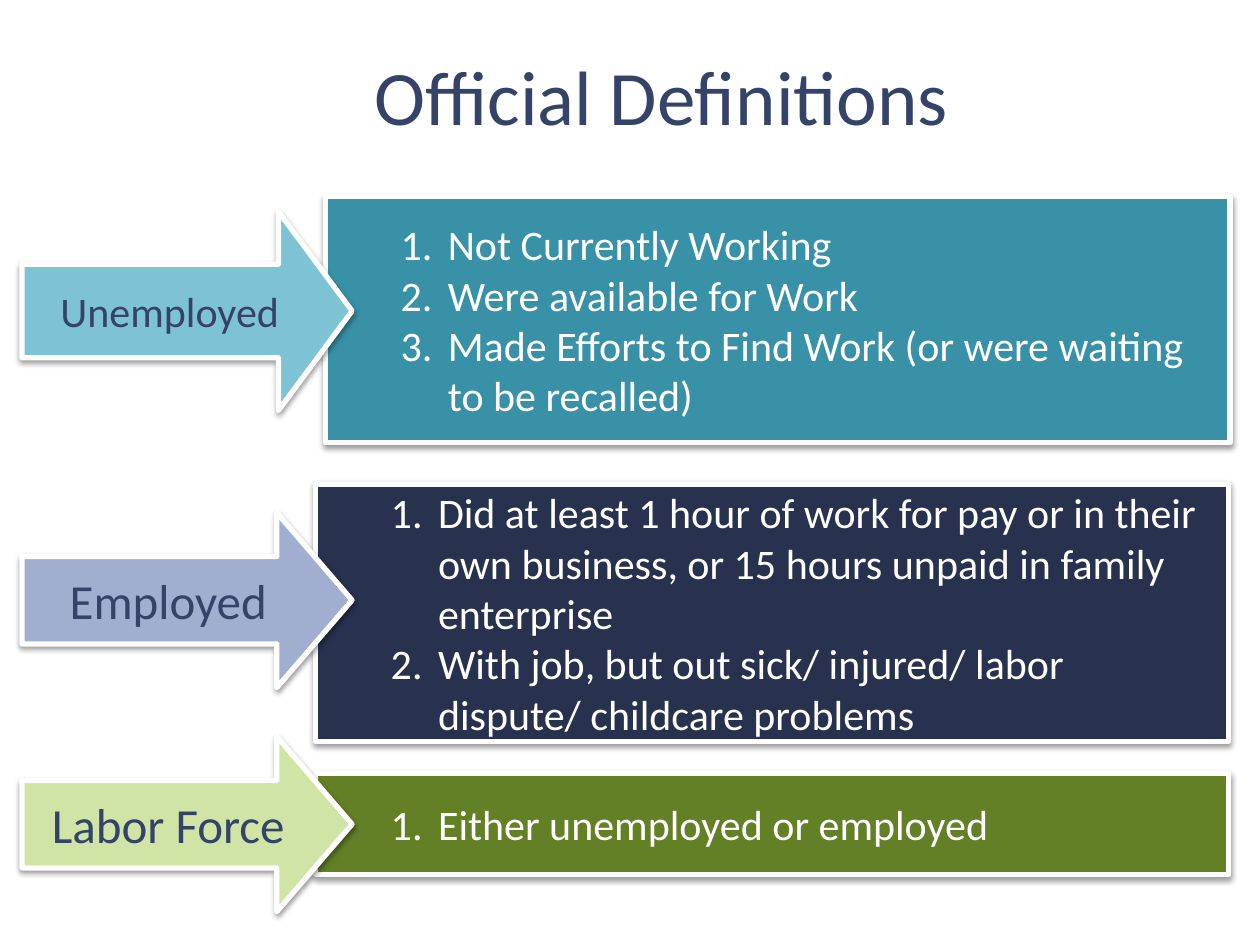
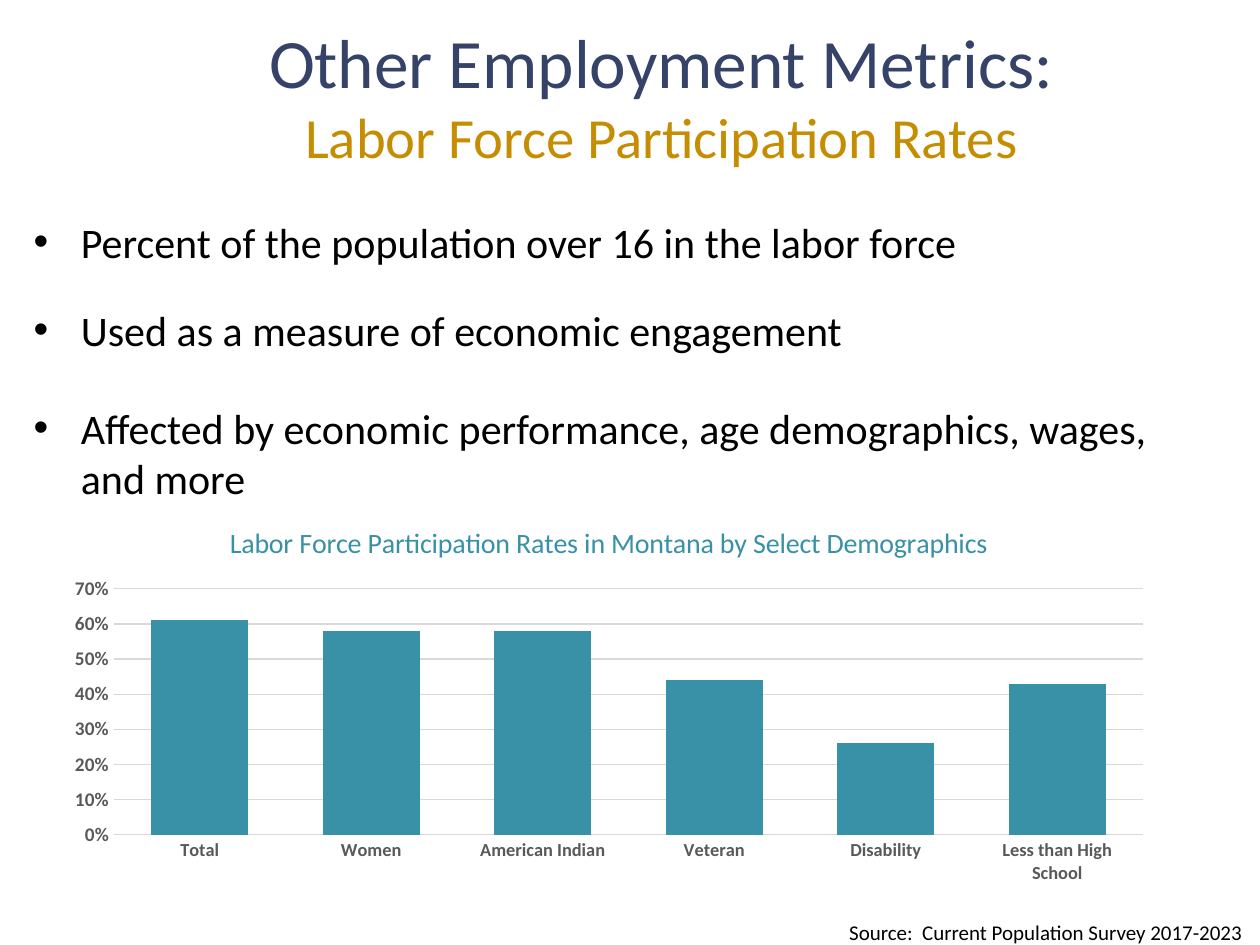
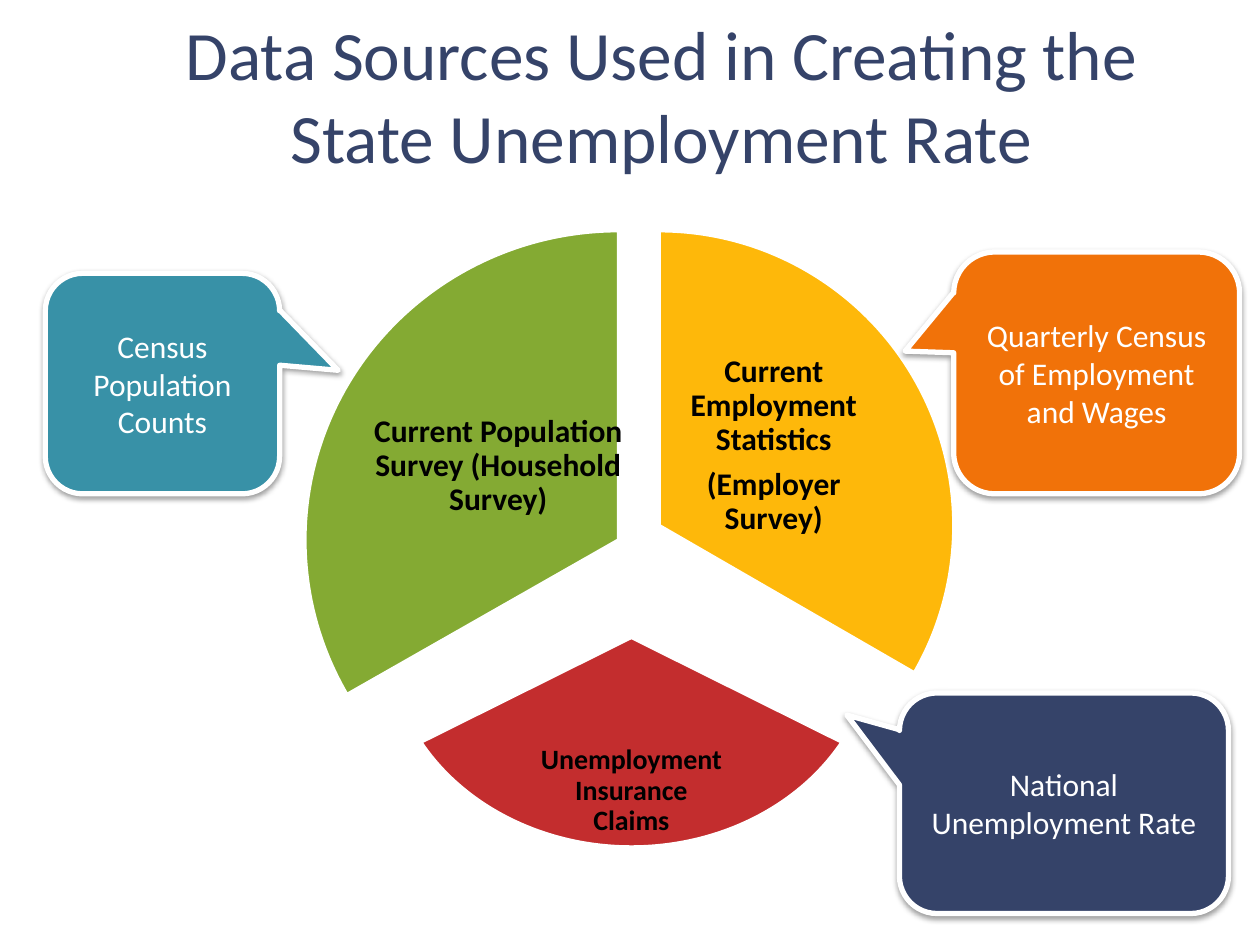
from math import cos, radians, sin, tan

from lxml import etree
from pptx import Presentation
from pptx.chart.data import CategoryChartData
from pptx.dml.color import RGBColor
from pptx.enum.chart import XL_CHART_TYPE, XL_TICK_MARK
from pptx.enum.shapes import MSO_SHAPE as SHAPE
from pptx.enum.text import MSO_ANCHOR as ANCHOR, MSO_AUTO_SIZE as AUTO, PP_ALIGN as ALIGN
from pptx.oxml.ns import qn
from pptx.util import Pt

# Shared look
FONT = "Calibri"
NAVY = RGBColor(0x35, 0x43, 0x69)
DARK_NAVY = RGBColor(0x28, 0x32, 0x4F)
TEAL = RGBColor(0x38, 0x91, 0xA7)
PALE_TEAL = RGBColor(0x7E, 0xC3, 0xD4)
PALE_BLUE = RGBColor(0xA1, 0xAE, 0xD0)
OLIVE = RGBColor(0x63, 0x80, 0x26)
PALE_GREEN = RGBColor(0xD0, 0xE4, 0xA6)
GREEN = RGBColor(0x84, 0xAA, 0x33)
GOLD = RGBColor(0xC5, 0x8D, 0x01)
YELLOW = RGBColor(0xFE, 0xB8, 0x0A)
ORANGE = RGBColor(0xF1, 0x72, 0x09)
RED = RGBColor(0xC3, 0x2D, 0x2E)
WHITE = RGBColor(0xFF, 0xFF, 0xFF)
BLACK = RGBColor(0x00, 0x00, 0x00)
GREY = RGBColor(0x59, 0x59, 0x59)
LIGHT_GREY = RGBColor(0xD9, 0xD9, 0xD9)

TITLE_AREA = (54, 12, 648, 84)
CONTENT_LAYOUT, TITLE_LAYOUT = 1, 5

# Slide 1: arrow area, head adjustments, label, size, fill; panel area, fill; numbered lines
DEFINITIONS = [
    ((12.6, 120.8, 188.6, 113.8), (0.47, 0.37), "Unemployed", 24, PALE_TEAL,
     (185.8, 112.4, 517, 140.4), TEAL,
     ["Not Currently Working", "Were available for Work",
      "Made Efforts to Find Work (or were waiting to be recalled)"]),
    ((12.6, 293, 188.6, 100), (0.5, 0.43), "Employed", 28, PALE_BLUE,
     (180.2, 276.7, 522, 146.9), DARK_NAVY,
     ["Did at least 1 hour of work for pay or in their own business, "
      "or 15 hours unpaid in family enterprise",
      "With job, but out sick/ injured/ labor dispute/ childcare problems"]),
    ((12.6, 421, 188.6, 100), (0.5, 0.43), "Labor Force", 28, PALE_GREEN,
     (180.2, 442, 522, 57.6), OLIVE, ["Either unemployed or employed"]),
]

# Slide 2: bullets with the space before each, and the chart
METRIC_BULLETS = [
    ("Percent of the population over 16 in the labor force", 0),
    ("Used as a measure of economic engagement", 21.5),
    ("Affected by economic performance, age demographics, wages, and more", 27.2),
]
PARTICIPATION = {"Total": 0.61, "Women": 0.58, "American Indian": 0.58,
                 "Veteran": 0.44, "Disability": 0.26, "Less than High School": 0.43}
CHART_AREA = (30, 288, 636, 222)

# Slide 3: ellipse area, start angle, insets, fill, size, lines
SLICES = [
    ((208.1, 131.8, 337, 337), -90, (168.5, 58.3, 37.4, 149.8), YELLOW, 18,
     ["Current Employment Statistics", "(Employer Survey)"]),
    ((221.8, 244.4, 278, 239.6), 30, (85.7, 195.8, 85.7, 20.2), RED, 16,
     ["Unemployment Insurance Claims"]),
    ((174.2, 131.8, 358.6, 353.6), 150, (34.6, 61.9, 172.1, 146.2), GREEN, 18,
     ["Current Population Survey (Household Survey)"]),
]
CALLOUTS = [
    ((25.9, 156.2, 133.9, 126), (0.75, -0.06, 0.17), TEAL, "Census Population Counts"),
    ((545, 144, 163.4, 138.2), (-0.67, -0.09, 0.17), ORANGE,
     "Quarterly Census of Employment and Wages"),
    ((514, 396, 188, 126), (-0.66, -0.4, 0.17), NAVY, "National Unemployment Rate"),
]


def points(area):
    return [Pt(value) for value in area]


def style_font(font, size, color, bold=False):
    font.name, font.size, font.bold = FONT, Pt(size), bold
    font.color.rgb = color


def add_span(para, text, size, color, bold=False):
    span = para.add_run()
    span.text = text
    style_font(span.font, size, color, bold)


def fill_paragraphs(frame, lines, size, color, align=ALIGN.CENTER, bold=False):
    """Write one paragraph per line and return the paragraphs."""
    for number, line in enumerate(lines):
        para = frame.add_paragraph() if number else frame.paragraphs[0]
        para.alignment = align
        add_span(para, line, size, color, bold)
    return frame.paragraphs


def place(box, area):
    box.left, box.top, box.width, box.height = points(area)


def add_page(deck, layout, *title_lines):
    """Add a slide; each title line is (text, size, colour)."""
    page = deck.slides.add_slide(deck.slide_layouts[layout])
    title = page.shapes.title
    place(title, TITLE_AREA)
    title.text_frame.auto_size = AUTO.NONE
    title.text_frame.vertical_anchor = ANCHOR.MIDDLE
    para = title.text_frame.paragraphs[0]
    para.alignment = ALIGN.CENTER
    for number, line in enumerate(title_lines):
        if number:
            para.add_line_break()
        add_span(para, *line)
    return page


def paint(shape, fill, line_width):
    shape.shadow.inherit = False
    shape.fill.solid()
    shape.fill.fore_color.rgb = fill
    shape.line.color.rgb = WHITE
    shape.line.width = Pt(line_width)
    shape.text_frame.word_wrap = True
    shape.text_frame.vertical_anchor = ANCHOR.MIDDLE


def add_raised_shape(page, kind, area, fill, adjustments=()):
    """Add a shape with a white edge and a soft shadow below it."""
    shape = page.shapes.add_shape(kind, *points(area))
    for number, value in enumerate(adjustments):
        shape.adjustments[number] = value
    paint(shape, fill, 3)
    effects = shape._element.spPr.find(qn("a:effectLst"))
    shadow = etree.SubElement(effects, qn("a:outerShdw"), blurRad="40000", dist="20000",
                              dir="5400000", rotWithShape="0")
    tone = etree.SubElement(shadow, qn("a:srgbClr"), val=str(BLACK))
    etree.SubElement(tone, qn("a:alpha"), val="38000")
    return shape


def number_paragraphs(paras):
    for para in paras:
        para.level = 1
        props = para._p.get_or_add_pPr()
        props.set("marL", str(Pt(63)))
        props.set("indent", str(Pt(-27)))
        etree.SubElement(props, qn("a:buAutoNum"), type="arabicPeriod")


def draw_step(outline, kind, *spots):
    step = etree.SubElement(outline, qn("a:" + kind))
    for x, y in spots:
        etree.SubElement(step, qn("a:pt"), x=str(Pt(x)), y=str(Pt(y)))


def draw_sector(outline, width, height, start):
    """Write a third of an ellipse as two curves of 60 degrees, clockwise."""
    reach = 4 / 3 * tan(radians(15))

    def spot(angle, along=0):
        turn = radians(angle)
        return (width / 2 * (1 + cos(turn) - along * sin(turn)),
                height / 2 * (1 + sin(turn) + along * cos(turn)))

    for step in list(outline):
        outline.remove(step)
    outline.set("w", str(Pt(width)))
    outline.set("h", str(Pt(height)))
    draw_step(outline, "moveTo", spot(start))
    for angle in (start, start + 60):
        draw_step(outline, "cubicBezTo", spot(angle, reach), spot(angle + 60, -reach),
                  spot(angle + 60))
    draw_step(outline, "lnTo", (width / 2, height / 2))
    draw_step(outline, "close")


def add_slice(page, area, start, insets, fill, size, lines):
    """Add a sector whose frame is that of its whole ellipse."""
    left, top, width, height = area
    builder = page.shapes.build_freeform(Pt(left), Pt(top))
    builder.add_line_segments([points((left + width, top)),
                               points((left + width, top + height))], close=True)
    piece = builder.convert_to_shape()
    place(piece, area)
    draw_sector(next(piece._element.iter(qn("a:path"))), width, height, start)
    paint(piece, fill, 2)
    frame = piece.text_frame
    (frame.margin_left, frame.margin_top,
     frame.margin_right, frame.margin_bottom) = points(insets)
    for para in fill_paragraphs(frame, lines, size, BLACK, bold=True):
        para.line_spacing = 0.9
        para.space_after = Pt(size * 0.35)


def set_layout(element, index, left, top, size=()):
    """Fix a chart part at a place given in points from the chart's corner."""
    layout = element.find(qn("c:layout"))
    if layout is None:
        layout = etree.Element(qn("c:layout"))
        element.insert(index, layout)
    chart_width, chart_height = CHART_AREA[2:]
    settings = {"layoutTarget": "inner"} if size else {}
    settings.update(xMode="edge", yMode="edge", x=left / chart_width, y=top / chart_height)
    if size:
        settings.update(w=size[0] / chart_width, h=size[1] / chart_height)
    manual = etree.SubElement(layout, qn("c:manualLayout"))
    for name, value in settings.items():
        etree.SubElement(manual, qn("c:" + name), val=str(value))


def add_participation_chart(page):
    data = CategoryChartData(number_format="0%")
    data.categories = list(PARTICIPATION)
    data.add_series("Series 1", list(PARTICIPATION.values()))
    chart = page.shapes.add_chart(XL_CHART_TYPE.COLUMN_CLUSTERED, *points(CHART_AREA),
                                  data).chart
    style_font(chart.font, 10, BLACK)
    chart.has_legend = False

    # Title and plot area
    chart.has_title = True
    title = chart.chart_title
    add_span(title.text_frame.paragraphs[0],
             "Labor Force Participation Rates in Montana by Select Demographics", 16, TEAL)
    set_layout(title._element, 1, 98.4, 8.7)
    set_layout(chart._chartSpace.chart.plotArea, 0, 35.2, 48.5, (588, 140.6))

    # Columns
    plot = chart.plots[0]
    plot.gap_width, plot.overlap, plot.vary_by_categories = 77, -27, False
    columns = plot.series[0]
    columns.format.fill.solid()
    columns.format.fill.fore_color.rgb = TEAL

    # Axes
    categories, values = chart.category_axis, chart.value_axis
    for axis, size in ((categories, 10.5), (values, 11)):
        axis.major_tick_mark = axis.minor_tick_mark = XL_TICK_MARK.NONE
        style_font(axis.tick_labels.font, size, GREY, bold=True)
    values.minimum_scale, values.maximum_scale, values.major_unit = 0, 0.7, 0.1
    values.tick_labels.number_format = "0%"
    values.tick_labels.number_format_is_linked = False
    values.format.line.fill.background()
    for line in (categories.format.line, values.major_gridlines.format.line):
        line.color.rgb = LIGHT_GREY
        line.width = Pt(0.75)


def add_definitions_page(deck):
    page = add_page(deck, TITLE_LAYOUT, ("Official Definitions", 44, NAVY))
    for arrow_area, head, label, size, tint, panel_area, fill, lines in DEFINITIONS:
        panel = add_raised_shape(page, SHAPE.RECTANGLE, panel_area, fill)
        number_paragraphs(fill_paragraphs(panel.text_frame, lines, 24, WHITE, ALIGN.LEFT))
        arrow = add_raised_shape(page, SHAPE.RIGHT_ARROW, arrow_area, tint, head)
        fill_paragraphs(arrow.text_frame, [label], size, NAVY)


def add_metrics_page(deck):
    page = add_page(deck, CONTENT_LAYOUT, ("Other Employment Metrics:", 39.6, NAVY),
                    ("Labor Force Participation Rates", 32.4, GOLD))
    body = page.placeholders[1]
    place(body, (12, 120, 690, 366))
    body.text_frame.auto_size = AUTO.NONE
    lines = [text for text, _ in METRIC_BULLETS]
    paras = fill_paragraphs(body.text_frame, lines, 24, BLACK, ALIGN.LEFT)
    for para, (_, gap) in zip(paras, METRIC_BULLETS):
        para.space_before = Pt(gap)

    # Source line
    source = page.shapes.add_textbox(*points((252, 522, 468, 18)))
    source.text_frame.word_wrap = True
    source.text_frame.margin_right = Pt(10)
    fill_paragraphs(source.text_frame, ["Source:  Current Population Survey 2017-2023"],
                    12, BLACK, ALIGN.RIGHT)
    add_participation_chart(page)


def add_sources_page(deck):
    page = add_page(deck, TITLE_LAYOUT,
                    ("Data Sources Used in Creating the State Unemployment Rate", 39.6, NAVY))
    for piece in SLICES:
        add_slice(page, *piece)
    for area, pointer, fill, text in CALLOUTS:
        callout = add_raised_shape(page, SHAPE.ROUNDED_RECTANGULAR_CALLOUT, area, fill, pointer)
        fill_paragraphs(callout.text_frame, [text], 18, WHITE)


def main():
    deck = Presentation()
    deck.slide_width, deck.slide_height = Pt(720), Pt(540)
    add_definitions_page(deck)
    add_metrics_page(deck)
    add_sources_page(deck)
    deck.save("out.pptx")


if __name__ == "__main__":
    main()
